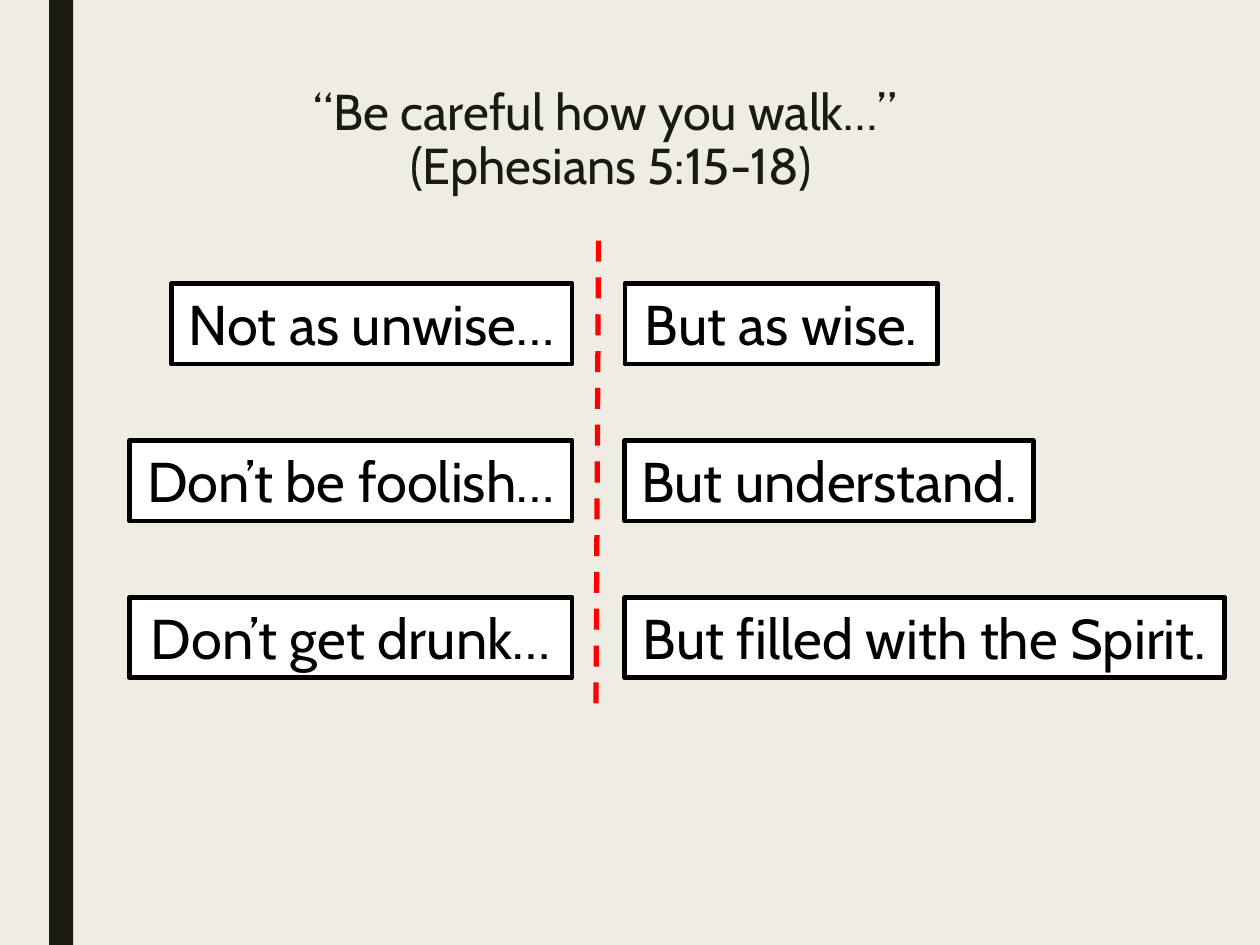
"""Builds a slide of three contrasts from Ephesians 5:15-18."""
from pptx import Presentation
from pptx.dml.color import RGBColor
from pptx.enum.dml import MSO_LINE
from pptx.enum.shapes import MSO_CONNECTOR, MSO_SHAPE
from pptx.enum.text import MSO_ANCHOR as Anchor, MSO_AUTO_SIZE as AutoSize, PP_ALIGN as Align
from pptx.oxml.ns import qn
from pptx.util import Inches, Pt

COLORS = {"paper": "EFEDE3", "ink": "191B0E", "box": "FFFFFF", "text": "000000", "divider": "FF0000"}
FONT = "Cabin"
TITLE = ("“Be careful how you walk…” ", "(Ephesians 5:15-18)")
CONTRASTS = [
    ("Not as unwise…", 3.18, "But as wise.", 2.48),
    ("Don’t be foolish…", 3.51, "But understand.", 3.24),
    ("Don’t get drunk…", 3.51, "But filled with the Spirit.", 4.76),
]
LEFT_COLUMN_END, RIGHT_COLUMN_START = 4.54, 4.96
FIRST_ROW, ROW_STEP, BOX_HEIGHT = 2.25, 1.245, 0.64


class SlideBuilder:
    """Holds the style and the current slide."""

    def __init__(self, slide):
        self.slide = slide
        fill = slide.background.fill
        fill.solid()
        fill.fore_color.rgb = self.color("paper")

    def color(self, name):
        return RGBColor.from_string(COLORS[name])

    def style(self, para, size, color):
        para.alignment = Align.CENTER
        para.font.name = FONT
        para.font.size = Pt(size)
        para.font.color.rgb = self.color(color)

    def rectangle(self, left, top, width, height, fill):
        shape = self.slide.shapes.add_shape(
            MSO_SHAPE.RECTANGLE, Inches(left), Inches(top), Inches(width), Inches(height))
        shape.shadow.inherit = False
        shape.fill.solid()
        shape.fill.fore_color.rgb = self.color(fill)
        shape.line.fill.background()
        return shape

    def text_box(self, text, left, top, width):
        box = self.rectangle(left, top, width, BOX_HEIGHT, "box")
        box.line.color.rgb = self.color("text")
        box.line.width = Pt(2.75)
        frame = box.text_frame
        frame.word_wrap = True
        frame.auto_size = AutoSize.SHAPE_TO_FIT_TEXT
        frame.vertical_anchor = Anchor.TOP
        frame.text = text
        self.style(frame.paragraphs[0], 32, "text")

    def dashed_line(self, start_x, start_y, end_x, end_y):
        line = self.slide.shapes.add_connector(
            MSO_CONNECTOR.STRAIGHT, Inches(start_x), Inches(start_y), Inches(end_x), Inches(end_y))
        line.line.color.rgb = self.color("divider")
        line.line.width = Pt(3)
        line.line.dash_style = MSO_LINE.DASH
        properties = line._element.spPr
        properties.append(properties.makeelement(qn("a:effectLst"), {}))

    def title(self, lines, left, top, width, height):
        title = self.slide.shapes.title
        title.left, title.top = Inches(left), Inches(top)
        title.width, title.height = Inches(width), Inches(height)
        frame = title.text_frame
        frame.auto_size = AutoSize.NONE
        frame.vertical_anchor = Anchor.MIDDLE
        para = frame.paragraphs[0]
        para.line_spacing = 0.89
        for index, line in enumerate(lines):
            if index:
                para.add_line_break()
            para.add_run().text = line
        self.style(para, 28.8, "ink")


def main():
    deck = Presentation()
    deck.slide_width, deck.slide_height = Inches(10), Inches(7.5)
    page = SlideBuilder(deck.slides.add_slide(deck.slide_layouts[5]))
    page.rectangle(0.39, 0, 0.19, 7.5, "ink")
    for row, (warning, warning_width, advice, advice_width) in enumerate(CONTRASTS):
        top = FIRST_ROW + row * ROW_STEP
        page.text_box(warning, LEFT_COLUMN_END - warning_width, top, warning_width)
        page.text_box(advice, RIGHT_COLUMN_START, top, advice_width)
    page.dashed_line(4.75, 1.91, 4.73, 5.59)
    page.title(TITLE, 0.91, 0.67, 7.88, 0.9)
    deck.save("out.pptx")


if __name__ == "__main__":
    main()
